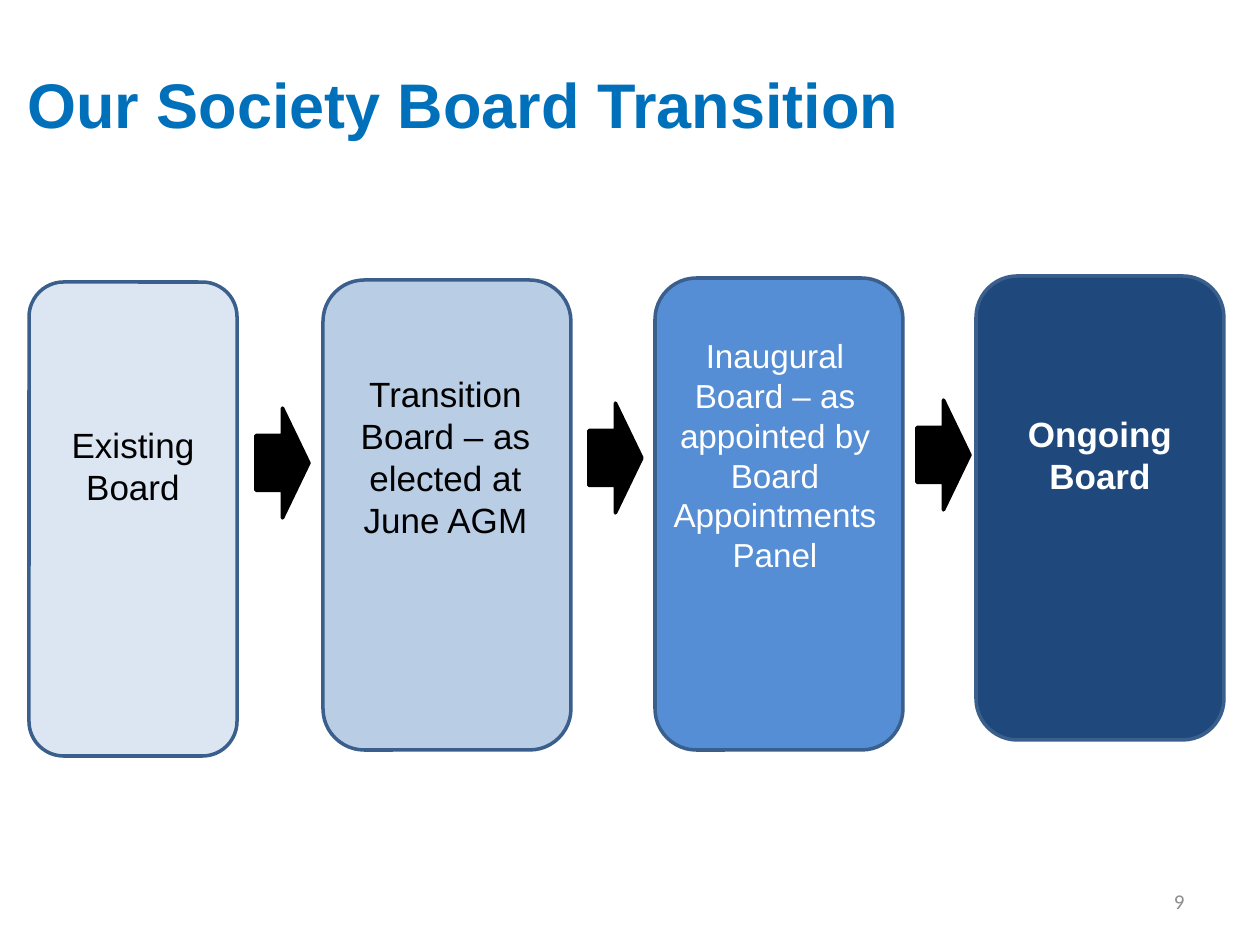
"""Build the board transition slide: four stages linked by block arrows."""
from typing import NamedTuple

from pptx import Presentation
from pptx.dml.color import RGBColor
from pptx.enum.shapes import MSO_SHAPE
from pptx.enum.text import MSO_ANCHOR, PP_ALIGN
from pptx.slide import Slide
from pptx.util import Emu, Pt

EMU_PER_PX = 914400 / 126
COLORS = {
    "title": "0070BB",
    "outline": "3A5F8C",
    "black": "000000",
    "white": "FFFFFF",
    "number": "8C8C8C",
    "existing": "DCE6F2",
    "transition": "B9CDE5",
    "inaugural": "558ED5",
    "ongoing": "1F497D",
}


class Box(NamedTuple):
    left: int
    top: int
    width: int
    height: int


class Label(NamedTuple):
    text: str
    box: Box
    size: int
    color: str
    bold: bool = False
    align: PP_ALIGN = PP_ALIGN.CENTER
    anchor: MSO_ANCHOR = MSO_ANCHOR.TOP
    font: str = "Arial"


class Stage(NamedTuple):
    box: Box
    fill: str
    label: Label


TITLE = Label("Our Society Board Transition", Box(15, 24, 1134, 158), 36, "title", True,
              PP_ALIGN.LEFT, MSO_ANCHOR.MIDDLE)
PAGE_NUMBER = Label("9", Box(903, 876, 294, 50), 12, "number", False,
                    PP_ALIGN.RIGHT, MSO_ANCHOR.MIDDLE, "Calibri")
STAGES = [
    Stage(Box(29, 282, 208, 474), "existing",
          Label("Existing Board", Box(58, 417, 150, 97), 20, "black")),
    Stage(Box(323, 280, 248, 470), "transition",
          Label("Transition Board – as elected at June AGM",
                Box(347, 366, 197, 183), 20, "black")),
    Stage(Box(655, 278, 248, 472), "inaugural",
          Label("Inaugural Board – as appointed by Board Appointments Panel",
                Box(658, 329, 234, 255), 19, "white")),
    Stage(Box(976, 276, 248, 464), "ongoing",
          Label("Ongoing Board", Box(1007, 406, 186, 97), 20, "white", True)),
]
ARROWS = [Box(left, top, 53, 110) for left, top in ((256, 408), (589, 403), (917, 400))]


def px(length: int) -> Emu:
    """Turn pixels into EMU."""
    return Emu(round(length * EMU_PER_PX))


def place(box: Box) -> list[Emu]:
    """Give the left, top, width and height of a box in EMU."""
    return [px(length) for length in box]


def color(name: str) -> RGBColor:
    """Look up a named colour."""
    return RGBColor.from_string(COLORS[name])


def draw_shape(slide: Slide, kind: MSO_SHAPE, box: Box, fill: str, line: str) -> None:
    """Draw a filled and outlined preset shape."""
    shape = slide.shapes.add_shape(kind, *place(box))
    shape.shadow.inherit = False
    shape.fill.solid()
    shape.fill.fore_color.rgb = color(fill)
    shape.line.color.rgb = color(line)
    shape.line.width = Pt(2)


def draw_label(slide: Slide, label: Label) -> None:
    """Draw a wrapped text box with one formatted paragraph."""
    text_frame = slide.shapes.add_textbox(*place(label.box)).text_frame
    text_frame.word_wrap = True
    text_frame.vertical_anchor = label.anchor
    text_frame.text = label.text
    paragraph = text_frame.paragraphs[0]
    paragraph.alignment = label.align
    font = paragraph.runs[0].font
    font.name = label.font
    font.size = Pt(label.size)
    font.bold = label.bold
    font.color.rgb = color(label.color)


def main() -> None:
    """Build and save the presentation."""
    presentation = Presentation()
    presentation.slide_width = px(1260)
    presentation.slide_height = px(945)
    slide = presentation.slides.add_slide(presentation.slide_layouts[6])
    draw_label(slide, PAGE_NUMBER)
    draw_label(slide, TITLE)
    for stage in STAGES:
        draw_shape(slide, MSO_SHAPE.FLOWCHART_ALTERNATE_PROCESS, stage.box,
                   stage.fill, "outline")
        draw_label(slide, stage.label)
    for box in ARROWS:
        draw_shape(slide, MSO_SHAPE.RIGHT_ARROW, box, "black", "black")
    presentation.save("out.pptx")


if __name__ == "__main__":
    main()
